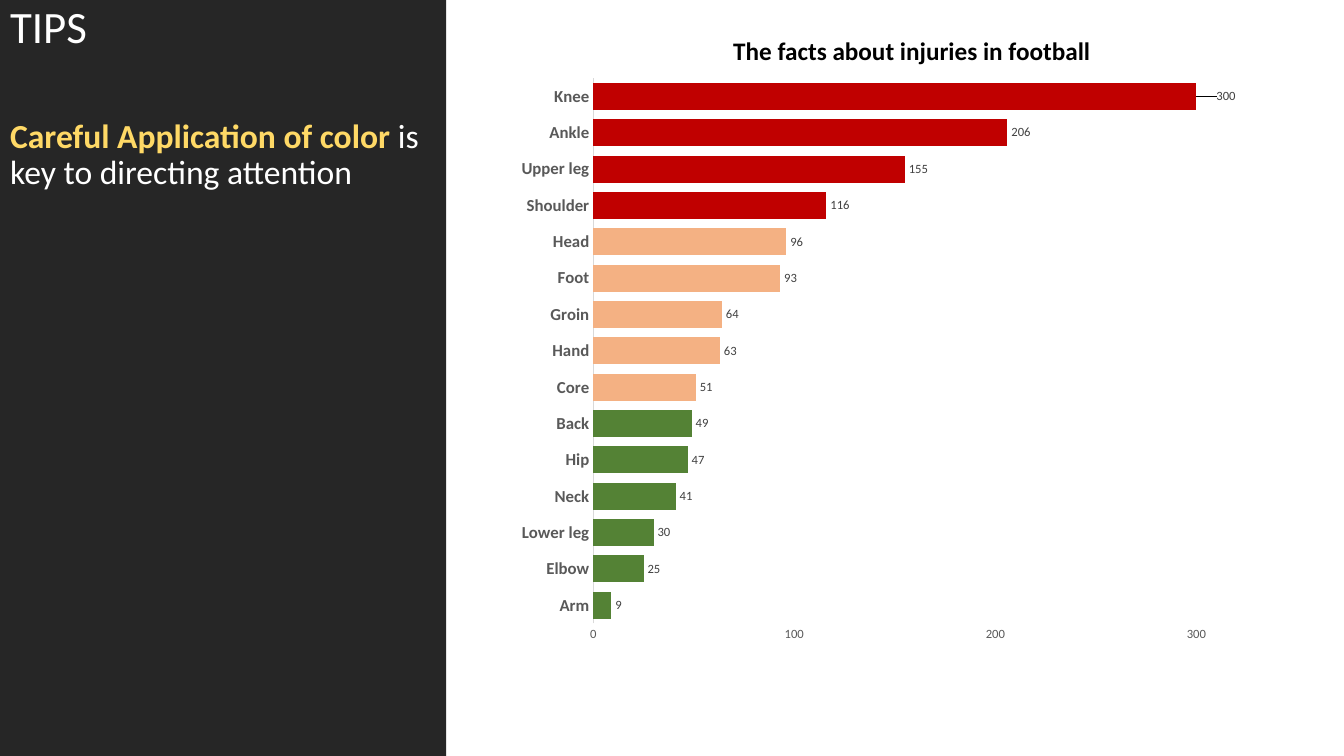
from dataclasses import dataclass

from lxml import etree
from pptx import Presentation, util as u
from pptx.chart.data import CategoryChartData
from pptx.dml.color import RGBColor
from pptx.enum import chart as ch, text as t
from pptx.oxml.ns import qn

WHITE = RGBColor(0xFF, 0xFF, 0xFF)
BLACK = RGBColor(0, 0, 0)
DARK = RGBColor(0x26, 0x26, 0x26)
GOLD = RGBColor(0xFF, 0xD9, 0x66)
RED = RGBColor(0xC0, 0, 0)
PEACH = RGBColor(0xF4, 0xB1, 0x83)
GREEN = RGBColor(0x54, 0x82, 0x35)
GREY = RGBColor(0x59, 0x59, 0x59)
INK = RGBColor(0x40, 0x40, 0x40)
RULE = RGBColor(0xD9, 0xD9, 0xD9)
FACE = "Calibri"
WIDE, HIGH = u.Inches(13.33), u.Inches(7.5)


@dataclass
class Band:
    """Body parts that share one bar colour."""
    color: RGBColor
    counts: dict[str, int]


@dataclass
class Box:
    """A place on the slide, as shares of its width and height."""
    x: float
    y: float
    w: float
    h: float

    def spot(self) -> tuple[int, int, int, int]:
        return (int(self.x * WIDE), int(self.y * HIGH),
                int(self.w * WIDE), int(self.h * HIGH))


BANDS = [
    Band(GREEN, {"Arm": 9, "Elbow": 25, "Lower leg": 30, "Neck": 41,
                 "Hip": 47, "Back": 49}),
    Band(PEACH, {"Core": 51, "Hand": 63, "Groin": 64, "Foot": 93, "Head": 96}),
    Band(RED, {"Shoulder": 116, "Upper leg": 155, "Ankle": 206, "Knee": 300}),
]
PANEL = Box(0, 0, 0.332, 1)
HEAD = Box(0.416, 0.04, 0.525, 0.053)
PLOT = Box(0.376, 0.088, 0.601, 0.777)


def style(font, size: float, color: RGBColor, bold: bool = False) -> None:
    font.name, font.size, font.bold = FACE, u.Pt(size), bold
    font.color.rgb = color


def write(para, words: str, *, size: float, color: RGBColor,
          bold: bool = False) -> None:
    run = para.add_run()
    run.text = words
    style(run.font, size, color, bold)


def place(shape, box: Box, anchor) -> t.MSO_ANCHOR:
    shape.left, shape.top, shape.width, shape.height = box.spot()
    frame = shape.text_frame
    frame.word_wrap = True
    frame.auto_size = t.MSO_AUTO_SIZE.NONE
    frame.vertical_anchor = anchor
    return frame


def plain(para, gap: float) -> None:
    """Take the bullet and indent off a body paragraph."""
    props = para._p.get_or_add_pPr()
    props.set("marL", "0")
    props.set("indent", "0")
    etree.SubElement(props, qn("a:buNone"))
    para.alignment = t.PP_ALIGN.LEFT
    para.line_spacing = 0.9
    para.space_before = u.Pt(gap)


def draw_panel(body) -> None:
    body.fill.solid()
    body.fill.fore_color.rgb = DARK
    frame = place(body, PANEL, t.MSO_ANCHOR.TOP)
    tips, advice = frame.paragraphs[0], frame.add_paragraph()
    plain(tips, 0)
    write(tips, "TIPS", size=32, color=WHITE)
    plain(advice, 47)
    write(advice, "Careful Application of color ", size=24, color=GOLD, bold=True)
    write(advice, "is key to directing attention", size=24, color=WHITE)


def draw_head(title) -> None:
    para = place(title, HEAD, t.MSO_ANCHOR.MIDDLE).paragraphs[0]
    para.alignment = t.PP_ALIGN.CENTER
    write(para, "The facts about injuries in football",
          size=18, color=BLACK, bold=True)


def draw_chart(slide) -> None:
    data = CategoryChartData()
    data.categories = [part for band in BANDS for part in band.counts]
    data.add_series("Series 1", [n for band in BANDS for n in band.counts.values()])
    chart = slide.shapes.add_chart(
        ch.XL_CHART_TYPE.BAR_CLUSTERED, *PLOT.spot(), data).chart
    chart.has_legend = chart.has_title = False
    style(chart.font, 10, BLACK)

    # Axes
    cat, val = chart.category_axis, chart.value_axis
    for axis in (cat, val):
        axis.major_tick_mark = axis.minor_tick_mark = ch.XL_TICK_MARK.NONE
        axis.has_major_gridlines = False
    style(cat.tick_labels.font, 12, GREY, True)
    cat.format.line.color.rgb = RULE
    cat.format.line.width = u.Pt(0.75)
    style(val.tick_labels.font, 9, GREY)
    val.format.line.fill.background()
    val.minimum_scale, val.maximum_scale, val.major_unit = 0, 350, 100

    # Bars, coloured by band
    plot = chart.plots[0]
    plot.gap_width = 35
    plot.vary_by_categories = False
    bars = plot.series[0]
    bars.format.fill.solid()
    bars.format.fill.fore_color.rgb = GREEN
    colors = [band.color for band in BANDS for _ in band.counts]
    for i, color in enumerate(colors):
        if color != GREEN:
            fill = bars.points[i].format.fill
            fill.solid()
            fill.fore_color.rgb = color

    # Value labels; the longest bar's label sits a little further right
    top = bars.points[len(colors) - 1].data_label
    for label in (bars.data_labels, top):
        style(label.font, 9, INK)
        label.position = ch.XL_LABEL_POSITION.OUTSIDE_END
    bars.data_labels.show_value = True
    layout = etree.Element(qn("c:layout"))
    manual = etree.SubElement(layout, qn("c:manualLayout"))
    for axis, shift in (("x", "0.02"), ("y", "0")):
        etree.SubElement(manual, qn(f"c:{axis}")).set("val", shift)
    chart.element.xpath(".//c:dLbl/c:idx")[0].addnext(layout)


def main() -> None:
    deck = Presentation()
    deck.slide_width, deck.slide_height = WIDE, HIGH
    slide = deck.slides.add_slide(deck.slide_layouts[1])
    draw_panel(slide.placeholders[1])
    draw_chart(slide)
    draw_head(slide.shapes.title)
    deck.save("out.pptx")


if __name__ == "__main__":
    main()
